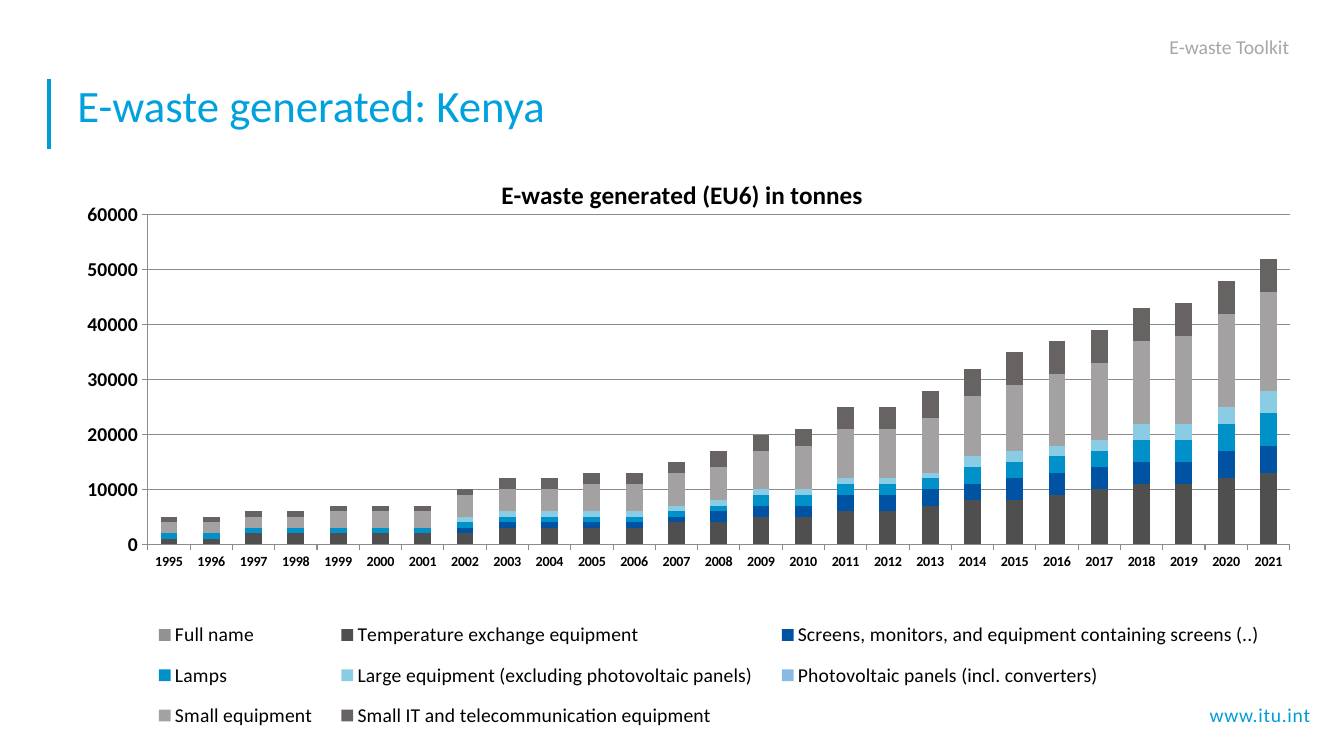
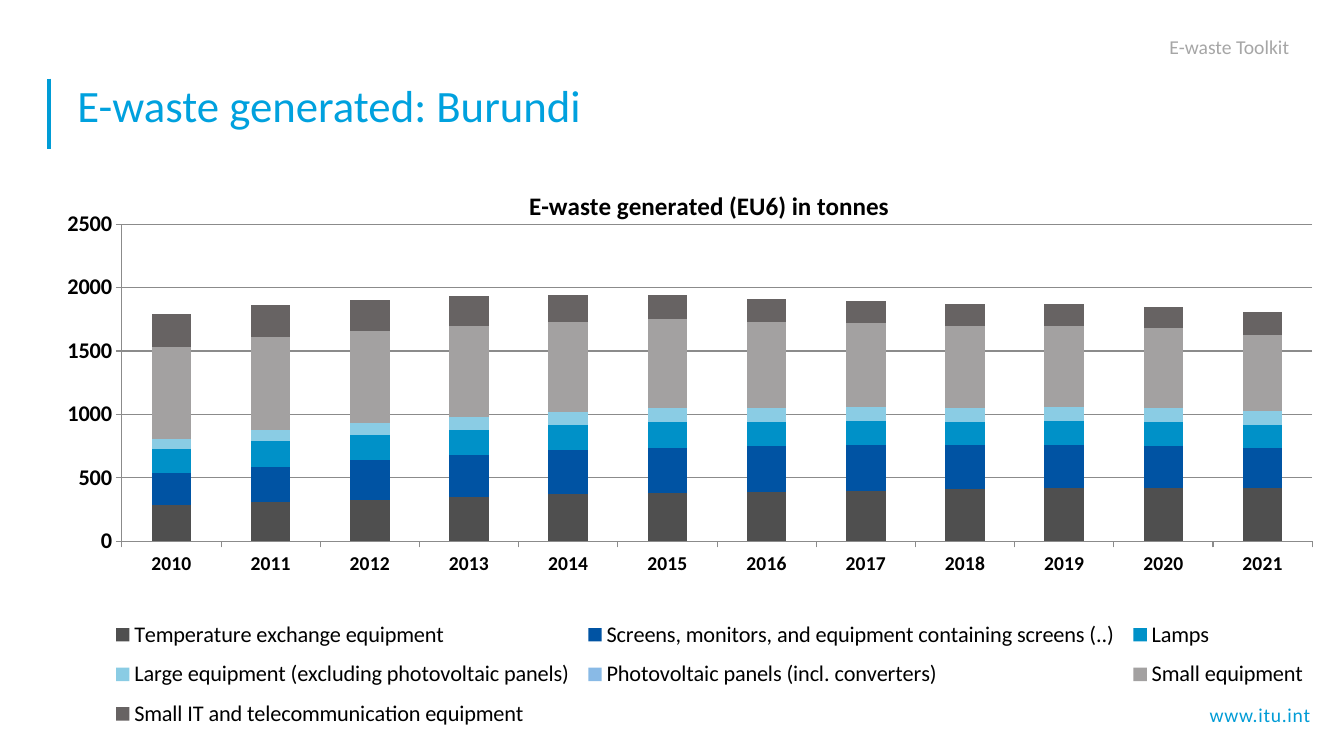
from dataclasses import dataclass

from pptx import Presentation
from pptx.chart.data import CategoryChartData
from pptx.dml.color import RGBColor
from pptx.enum.chart import XL_CHART_TYPE as ChartType
from pptx.enum.chart import XL_LEGEND_POSITION as LegendPosition
from pptx.enum.chart import XL_TICK_MARK as TickMark
from pptx.enum.shapes import MSO_CONNECTOR as Connector
from pptx.enum.text import MSO_ANCHOR as Anchor
from pptx.enum.text import MSO_AUTO_SIZE as AutoSize
from pptx.enum.text import PP_ALIGN as Align
from pptx.oxml import parse_xml
from pptx.oxml.ns import nsdecls, qn
from pptx.slide import Slide
from pptx.util import Cm, Pt

FONT = "Calibri"
TITLE_BLUE = RGBColor(0x00, 0xA1, 0xDE)
ACCENT_BLUE = RGBColor(0x00, 0x9C, 0xD6)
HEADER_GREY = RGBColor(0xA6, 0xA6, 0xA6)
GRID_GREY = RGBColor(0x8B, 0x8B, 0x8B)
BLACK = RGBColor(0x00, 0x00, 0x00)

FULL_NAME = "Full name"
TEMPERATURE = "Temperature exchange equipment"
SCREENS = "Screens, monitors, and equipment containing screens (..)"
LAMPS = "Lamps"
LARGE = "Large equipment (excluding photovoltaic panels)"
PANELS = "Photovoltaic panels (incl. converters)"
SMALL = "Small equipment"
SMALL_IT = "Small IT and telecommunication equipment"

WASTE_COLORS = {
    FULL_NAME: RGBColor(0x92, 0x92, 0x92),
    TEMPERATURE: RGBColor(0x4F, 0x4F, 0x4F),
    SCREENS: RGBColor(0x00, 0x53, 0xA3),
    LAMPS: RGBColor(0x00, 0x91, 0xC8),
    LARGE: RGBColor(0x8A, 0xCC, 0xE4),
    PANELS: RGBColor(0x89, 0xBA, 0xE6),
    SMALL: RGBColor(0xA3, 0xA1, 0xA1),
    SMALL_IT: RGBColor(0x67, 0x63, 0x63),
}


@dataclass(frozen=True)
class Box:
    left: float
    top: float
    width: float
    height: float


@dataclass(frozen=True)
class Label:
    box: Box
    size: int
    color: RGBColor
    align: Align = Align.LEFT
    line_spacing: float | Pt = 1.0
    space_before: int = 0
    tracking: int = 0
    grows: bool = False


@dataclass(frozen=True)
class CountryWaste:
    country: str
    first_year: int
    last_year: int
    tonnes: dict[str, list[int]]
    frame: Box
    plot: Box
    legend: Box
    year_size: int
    tonnes_size: int
    legend_size: int
    axis_top: int
    axis_step: int


TITLE = Label(Box(1.7, 1.98, 30.48, 1.78), 32, TITLE_BLUE, line_spacing=0.9)
HEADER = Label(Box(21.01, 0.56, 11.73, 0.89), 14, HEADER_GREY, Align.RIGHT,
               line_spacing=Pt(22), space_before=10)
FOOTER = Label(Box(26.34, 17.6, 6.93, 0.86), 14, ACCENT_BLUE, Align.RIGHT,
               tracking=50, grows=True)

KENYA = CountryWaste(
    country="Kenya",
    first_year=1995,
    last_year=2021,
    tonnes={
        FULL_NAME: [0] * 7,
        TEMPERATURE: [1000, 1000, 2000, 2000, 2000, 2000, 2000, 2000, 3000,
                      3000, 3000, 3000, 4000, 4000, 5000, 5000, 6000, 6000,
                      7000, 8000, 8000, 9000, 10000, 11000, 11000, 12000, 13000],
        SCREENS: [0] * 7 + [1000] * 6 + [2000] * 3 + [3000] * 4
                 + [4000] * 5 + [5000] * 2,
        LAMPS: [1000] * 14 + [2000] * 5 + [3000] * 4 + [4000] * 2 + [5000, 6000],
        LARGE: [0] * 7 + [1000] * 12 + [2000] * 4 + [3000] * 3 + [4000],
        PANELS: [0] * 27,
        SMALL: [2000, 2000, 2000, 2000, 3000, 3000, 3000, 4000, 4000,
                4000, 5000, 5000, 6000, 6000, 7000, 8000, 9000, 9000,
                10000, 11000, 12000, 13000, 14000, 15000, 16000, 17000, 18000],
        SMALL_IT: [1000] * 8 + [2000] * 5 + [3000] * 3 + [4000] * 2
                  + [5000] * 2 + [6000] * 7,
    },
    frame=Box(0.84, 3.73, 32.44, 15.32),
    plot=Box(0.089, 0.11, 0.887, 0.542),
    legend=Box(0.08, 0.755, 0.89, 0.225),
    year_size=10,
    tonnes_size=14,
    legend_size=14,
    axis_top=60000,
    axis_step=10000,
)

BURUNDI = CountryWaste(
    country="Burundi",
    first_year=2010,
    last_year=2021,
    tonnes={
        TEMPERATURE: [290, 310, 330, 350, 370, 380, 390, 400, 410, 420, 420, 420],
        SCREENS: [250, 280, 310, 330, 350, 360, 360, 360, 350, 340, 330, 320],
        LAMPS: [190, 200, 200, 200, 200, 200, 190, 190, 180, 190, 190, 180],
        LARGE: [80, 90, 90, 100, 100] + [110] * 7,
        PANELS: [0] * 12,
        SMALL: [720, 730, 730, 720, 710, 700, 680, 660, 650, 640, 630, 600],
        SMALL_IT: [260, 250, 240, 230, 210, 190, 180, 170, 170, 170, 170, 180],
    },
    frame=Box(1.7, 4.04, 31.75, 15.01),
    plot=Box(0.039, 0.107, 0.949, 0.533),
    legend=Box(0.025, 0.753, 0.965, 0.22),
    year_size=14,
    tonnes_size=16,
    legend_size=16,
    axis_top=2500,
    axis_step=500,
)


def lengths(box: Box) -> tuple[Cm, Cm, Cm, Cm]:
    return Cm(box.left), Cm(box.top), Cm(box.width), Cm(box.height)


def add_label(slide: Slide, label: Label, text: str) -> None:
    frame = slide.shapes.add_textbox(*lengths(label.box)).text_frame
    frame.word_wrap = True
    frame.vertical_anchor = Anchor.TOP
    frame.auto_size = AutoSize.SHAPE_TO_FIT_TEXT if label.grows else AutoSize.NONE
    paragraph = frame.paragraphs[0]
    paragraph.alignment = label.align
    paragraph.line_spacing = label.line_spacing
    paragraph.space_before = Pt(label.space_before)
    run = paragraph.add_run()
    run.text = text
    run.font.name = FONT
    run.font.size = Pt(label.size)
    run.font.color.rgb = label.color
    if label.tracking:
        run.font._element.set("spc", str(label.tracking))


def add_title_rule(slide: Slide) -> None:
    rule = slide.shapes.add_connector(
        Connector.STRAIGHT, Cm(1.24), Cm(1.98), Cm(1.24), Cm(3.76))
    rule.line.color.rgb = ACCENT_BLUE
    rule.line.width = Pt(3)
    rule._element.spPr.append(parse_xml(f"<a:effectLst {nsdecls('a')}/>"))


def place(part, index: int, box: Box, inner: bool = False) -> None:
    for old in part.findall(qn("c:layout")):
        part.remove(old)
    target = '<c:layoutTarget val="inner"/>' if inner else ""
    values = {"x": box.left, "y": box.top, "w": box.width, "h": box.height}
    numbers = "".join(
        f'<c:{key} val="{value}"/>' for key, value in values.items() if value)
    part.insert(index, parse_xml(
        f"<c:layout {nsdecls('c')}><c:manualLayout>{target}"
        f'<c:xMode val="edge"/><c:yMode val="edge"/>{numbers}'
        "</c:manualLayout></c:layout>"))


def style_axis(axis, size: int) -> None:
    axis.major_tick_mark = TickMark.OUTSIDE
    axis.minor_tick_mark = TickMark.NONE
    axis.format.line.color.rgb = GRID_GREY
    font = axis.tick_labels.font
    font.name = FONT
    font.size = Pt(size)
    font.bold = True
    font.color.rgb = BLACK


def add_waste_chart(slide: Slide, waste: CountryWaste) -> None:
    data = CategoryChartData()
    data.categories = [
        str(year) for year in range(waste.first_year, waste.last_year + 1)]
    for name, tonnes in waste.tonnes.items():
        data.add_series(name, tonnes)
    chart = slide.shapes.add_chart(
        ChartType.COLUMN_STACKED, *lengths(waste.frame), data).chart
    chart.font.name = FONT
    chart.font.size = Pt(10)
    chart.font.color.rgb = BLACK

    chart.has_title = True
    heading = chart.chart_title.text_frame.paragraphs[0].add_run()
    heading.text = "E-waste generated (EU6) in tonnes"
    heading.font.name = FONT
    heading.font.size = Pt(18)
    heading.font.bold = True
    heading.font.color.rgb = BLACK

    columns = chart.plots[0]
    columns.gap_width = 150
    columns.overlap = 100
    columns.vary_by_categories = False
    for series in columns.series:
        series.format.fill.solid()
        series.format.fill.fore_color.rgb = WASTE_COLORS[series.name]

    style_axis(chart.category_axis, waste.year_size)
    tonnes_axis = chart.value_axis
    style_axis(tonnes_axis, waste.tonnes_size)
    tonnes_axis.minimum_scale = 0
    tonnes_axis.maximum_scale = waste.axis_top
    tonnes_axis.major_unit = waste.axis_step
    tonnes_axis.tick_labels.number_format = "0"
    tonnes_axis.tick_labels.number_format_is_linked = False
    tonnes_axis.has_major_gridlines = True
    tonnes_axis.major_gridlines.format.line.color.rgb = GRID_GREY

    chart.has_legend = True
    chart.legend.position = LegendPosition.BOTTOM
    chart.legend.include_in_layout = False
    chart.legend.font.name = FONT
    chart.legend.font.size = Pt(waste.legend_size)
    chart.legend.font.color.rgb = BLACK

    place(chart.element.find(".//" + qn("c:title")), 1, Box(0.36, 0.04, 0, 0))
    place(chart.element.find(".//" + qn("c:plotArea")), 0, waste.plot, inner=True)
    place(chart.element.find(".//" + qn("c:legend")), 1, waste.legend)


def add_country_slide(deck, waste: CountryWaste) -> None:
    slide = deck.slides.add_slide(deck.slide_layouts[6])
    add_label(slide, FOOTER, "www.itu.int")
    add_title_rule(slide)
    add_label(slide, TITLE, f"E-waste generated: {waste.country}")
    add_label(slide, HEADER, "E-waste Toolkit")
    add_waste_chart(slide, waste)


def main() -> None:
    deck = Presentation()
    deck.slide_width = Cm(33.87)
    deck.slide_height = Cm(19.05)
    for waste in (KENYA, BURUNDI):
        add_country_slide(deck, waste)
    deck.save("out.pptx")


if __name__ == "__main__":
    main()
